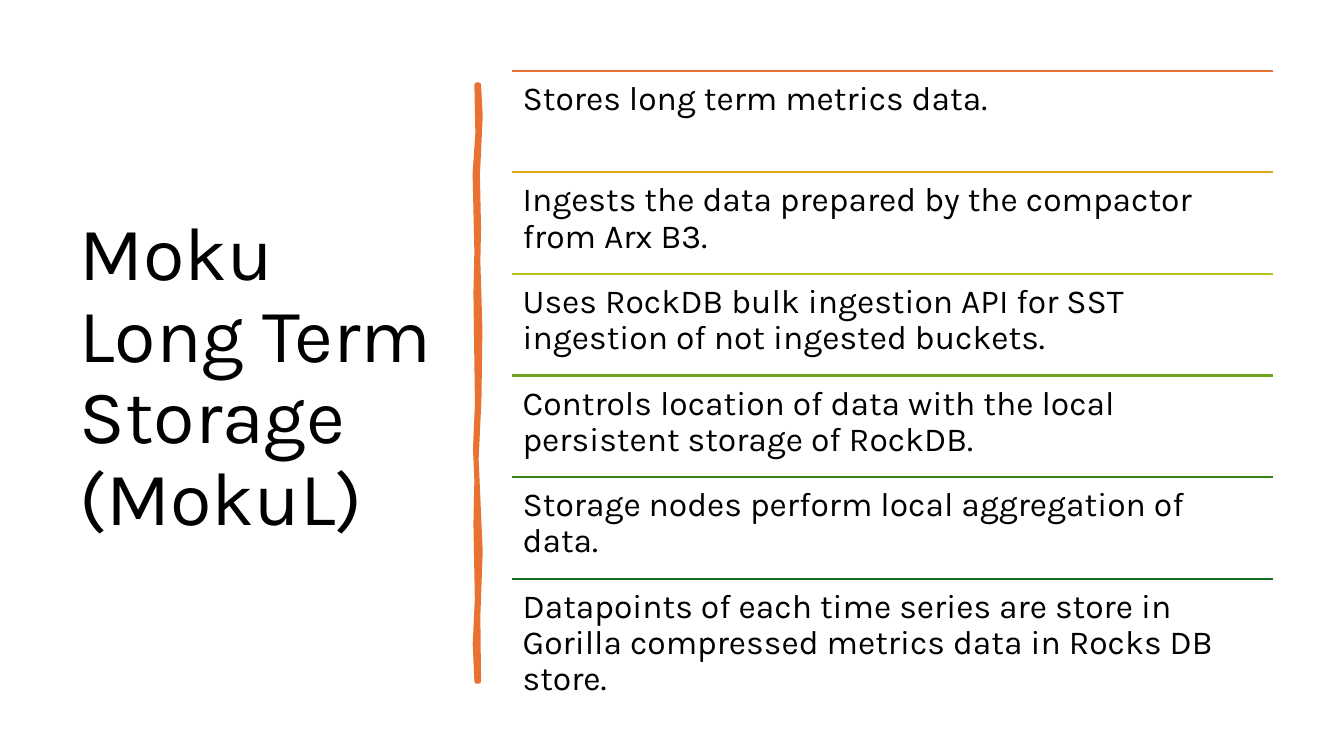
from dataclasses import dataclass

from lxml import etree
from pptx import Presentation
from pptx.dml.color import RGBColor
from pptx.enum import shapes, text
from pptx.oxml import ns
from pptx.util import Pt

FONT = "Karla"
BLACK = RGBColor(0x00, 0x00, 0x00)
ORANGE = RGBColor(0xE9, 0x71, 0x32)
AMBER = RGBColor(0xE0, 0xA6, 0x1D)
LIME = RGBColor(0xB7, 0xC1, 0x1E)
LEAF = RGBColor(0x6B, 0xA3, 0x1D)
GREEN = RGBColor(0x34, 0x86, 0x1C)
FOREST = RGBColor(0x19, 0x6B, 0x24)

LIST_LEFT, LIST_TOP, LIST_WIDTH, ROW_HEIGHT = 365.8, 50.4, 543.6, 72.6
INSET = 7.5

BRUSH_RIGHT = [(342, 60.5), (343.2, 83), (341.2, 125), (342, 163),
               (341.5, 187), (343, 235), (342.3, 285), (340.3, 328),
               (342, 367), (343.2, 394), (341.5, 440), (342, 486.7)]
BRUSH_LEFT = [(340.5, 486.7), (339.3, 460), (340.8, 428), (339.8, 374),
              (340.5, 343), (339.5, 321), (340.9, 288), (339.8, 210),
              (340.5, 180), (339.2, 124), (341.2, 95), (340.5, 60.5)]


@dataclass
class Row:
    wording: str
    color: RGBColor


ROWS = [
    Row("Stores long term metrics data.", ORANGE),
    Row("Ingests the data prepared by the compactor from Arx B3.", AMBER),
    Row("Uses RockDB bulk ingestion API for SST ingestion of not ingested buckets.", LIME),
    Row("Controls location of data with the local persistent storage of RockDB.", LEAF),
    Row("Storage nodes perform local aggregation of data.", GREEN),
    Row("Datapoints of each time series are store in Gorilla compressed metrics data in Rocks DB store.", FOREST),
]


def write(tf, wording: str, size: float) -> None:
    tf.word_wrap = True
    tf.auto_size = text.MSO_AUTO_SIZE.NONE
    tf.text = wording
    p = tf.paragraphs[0]
    p.alignment = text.PP_ALIGN.LEFT
    p.line_spacing = 0.9
    font = p.runs[0].font
    font.name, font.size = FONT, Pt(size)
    font.color.rgb = BLACK


def add_title(s) -> None:
    sp = s.shapes.title
    sp.left, sp.top, sp.width, sp.height = Pt(49.7), Pt(50.4), Pt(269.3), Pt(440)
    write(sp.text_frame, "Moku Long Term Storage (MokuL)", 54)
    sp.text_frame.vertical_anchor = text.MSO_ANCHOR.MIDDLE


def add_brush_stroke(s) -> None:
    start, *rest = [(Pt(x), Pt(y)) for x, y in BRUSH_RIGHT + BRUSH_LEFT]
    builder = s.shapes.build_freeform(*start)
    builder.add_line_segments(rest, close=True)
    sp = builder.convert_to_shape()
    sp.shadow.inherit = False
    sp.fill.solid()
    sp.fill.fore_color.rgb = ORANGE
    sp.line.color.rgb = ORANGE
    sp.line.width = Pt(3.25)


def add_row(s, row: Row, top: float) -> None:
    rule = s.shapes.add_connector(
        shapes.MSO_CONNECTOR.STRAIGHT,
        Pt(LIST_LEFT), Pt(top), Pt(LIST_LEFT + LIST_WIDTH), Pt(top))
    rule.line.color.rgb = row.color
    rule.line.width = Pt(1.5)
    etree.SubElement(rule._element.spPr, ns.qn("a:effectLst"))

    sp = s.shapes.add_textbox(Pt(LIST_LEFT), Pt(top), Pt(LIST_WIDTH), Pt(ROW_HEIGHT))
    tf = sp.text_frame
    tf.margin_left = tf.margin_right = tf.margin_top = tf.margin_bottom = Pt(INSET)
    tf.vertical_anchor = text.MSO_ANCHOR.TOP
    write(tf, row.wording, 24)


def main() -> None:
    prs = Presentation()
    prs.slide_width, prs.slide_height = Pt(960), Pt(540)
    s = prs.slides.add_slide(prs.slide_layouts[5])
    add_title(s)
    add_brush_stroke(s)
    for i, row in enumerate(ROWS):
        add_row(s, row, LIST_TOP + i * ROW_HEIGHT)
    prs.save("out.pptx")


if __name__ == "__main__":
    main()
